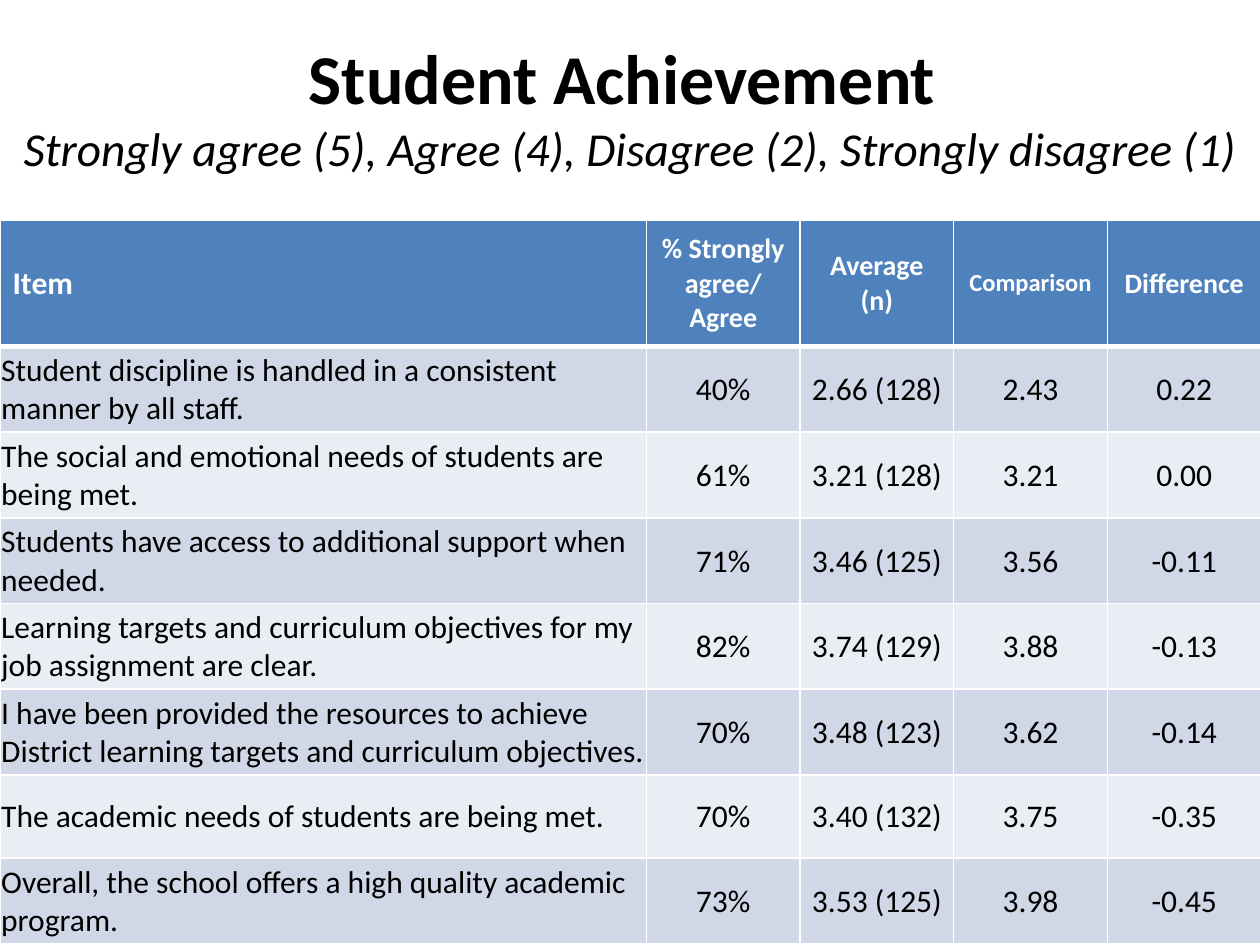
import lxml.etree
import pptx
import pptx.dml.color
import pptx.enum.text
import pptx.oxml.ns
import pptx.util

Inches = pptx.util.Inches
Align = pptx.enum.text.PP_ALIGN
Anchor = pptx.enum.text.MSO_ANCHOR

COLUMN_WIDTHS = [5.13] + [1.22] * 4
ROW_HEIGHTS = [1] + [0.68] * 5 + [0.66, 0.68]
HEADERS = [
    ("Item", 18),
    ("% Strongly agree/ Agree", 16),
    ("Average (n)", 16),
    ("Comparison", 14),
    ("Difference", 16),
]
RESULTS = [
    ("Student discipline is handled in a consistent manner by all staff.",
     "40%", "2.66 (128)", "2.43", "0.22"),
    ("The social and emotional needs of students are being met.",
     "61%", "3.21 (128)", "3.21", "0.00"),
    ("Students have access to additional support when needed.",
     "71%", "3.46 (125)", "3.56", "-0.11"),
    ("Learning targets and curriculum objectives for my job assignment are clear.",
     "82%", "3.74 (129)", "3.88", "-0.13"),
    ("I have been provided the resources to achieve District learning targets "
     "and curriculum objectives.",
     "70%", "3.48 (123)", "3.62", "-0.14"),
    ("The academic needs of students are being met.",
     "70%", "3.40 (132)", "3.75", "-0.35"),
    ("Overall, the school offers a high quality academic program.",
     "73%", "3.53 (125)", "3.98", "-0.45"),
]


def color(value):
    return pptx.dml.color.RGBColor.from_string(value)


def style_span(span, size, ink, bold=False, italic=False):
    span.font.name = "Calibri"
    span.font.size = pptx.util.Pt(size)
    span.font.color.rgb = color(ink)
    span.font.bold = bold
    span.font.italic = italic


def add_title(page, title, subtitle):
    box = page.shapes.add_textbox(0, 0, Inches(10), Inches(1.67))
    frame = box.text_frame
    frame.word_wrap = True
    frame.vertical_anchor = Anchor.MIDDLE
    frame.text = title + "\v" + subtitle
    para = frame.paragraphs[0]
    para.alignment = Align.CENTER
    heading, scale = para.runs
    style_span(heading, 40, "000000", bold=True)
    style_span(scale, 27, "000000", italic=True)


def set_borders(cell, bottom_width):
    properties = cell._tc.get_or_add_tcPr()
    widths = {"a:lnL": 1, "a:lnR": 1, "a:lnT": 1, "a:lnB": bottom_width}
    qn = pptx.oxml.ns.qn
    for position, (side, width) in enumerate(widths.items()):
        line = lxml.etree.Element(qn(side), w=str(pptx.util.Pt(width)))
        fill = lxml.etree.SubElement(line, qn("a:solidFill"))
        lxml.etree.SubElement(fill, qn("a:srgbClr"), val="FFFFFF")
        properties.insert(position, line)


def fill_cell(cell, text, size, ink, background, centered, bold=False, bottom_width=1):
    cell.text_frame.text = text
    cell.vertical_anchor = Anchor.MIDDLE
    para = cell.text_frame.paragraphs[0]
    para.alignment = Align.CENTER if centered else Align.LEFT
    style_span(para.runs[0], size, ink, bold)
    cell.fill.solid()
    cell.fill.fore_color.rgb = color(background)
    set_borders(cell, bottom_width)


def add_results_table(page):
    frame = page.shapes.add_table(
        len(ROW_HEIGHTS), len(COLUMN_WIDTHS),
        0, Inches(1.75), Inches(sum(COLUMN_WIDTHS)), Inches(sum(ROW_HEIGHTS)))
    table = frame.table
    for column, width in zip(table.columns, COLUMN_WIDTHS):
        column.width = Inches(width)
    for row, height in zip(table.rows, ROW_HEIGHTS):
        row.height = Inches(height)

    for column, (text, size) in enumerate(HEADERS):
        fill_cell(table.cell(0, column), text, size, "FFFFFF", "4F81BD",
                  column > 0, bold=True, bottom_width=3)

    for row, result in enumerate(RESULTS, start=1):
        background = "D0D8E8" if row % 2 else "E9EDF4"
        for column, text in enumerate(result):
            cell = table.cell(row, column)
            fill_cell(cell, text, 18, "000000", background, column > 0)
            cell.margin_left = cell.margin_right = cell.margin_top = Inches(0.01)
            cell.margin_bottom = 0


def main():
    deck = pptx.Presentation()
    deck.slide_width = Inches(10)
    deck.slide_height = Inches(7.5)
    page = deck.slides.add_slide(deck.slide_layouts[6])
    add_title(page, "Student Achievement ",
              "Strongly agree (5), Agree (4), Disagree (2), Strongly disagree (1)")
    add_results_table(page)
    deck.save("out.pptx")


if __name__ == "__main__":
    main()
